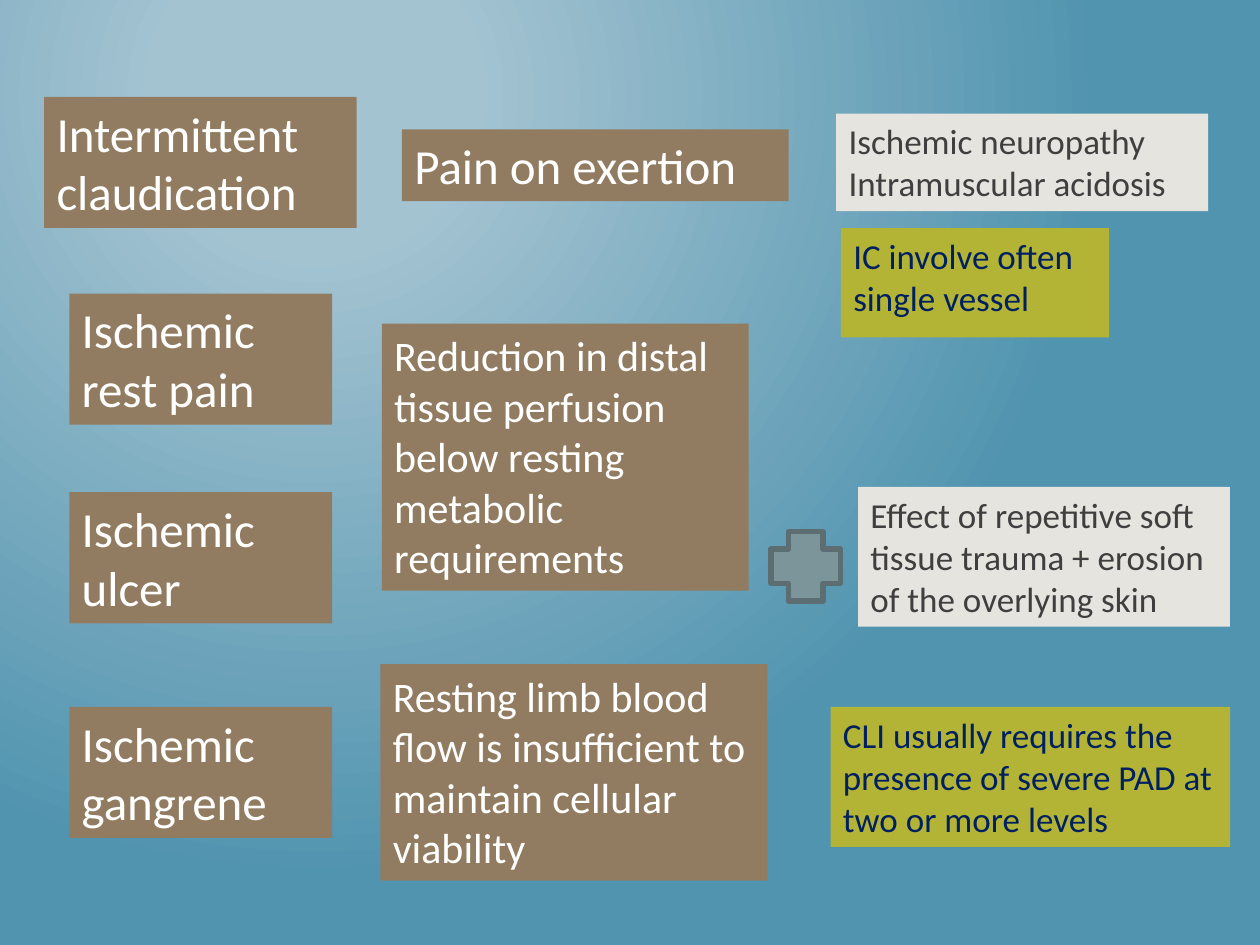
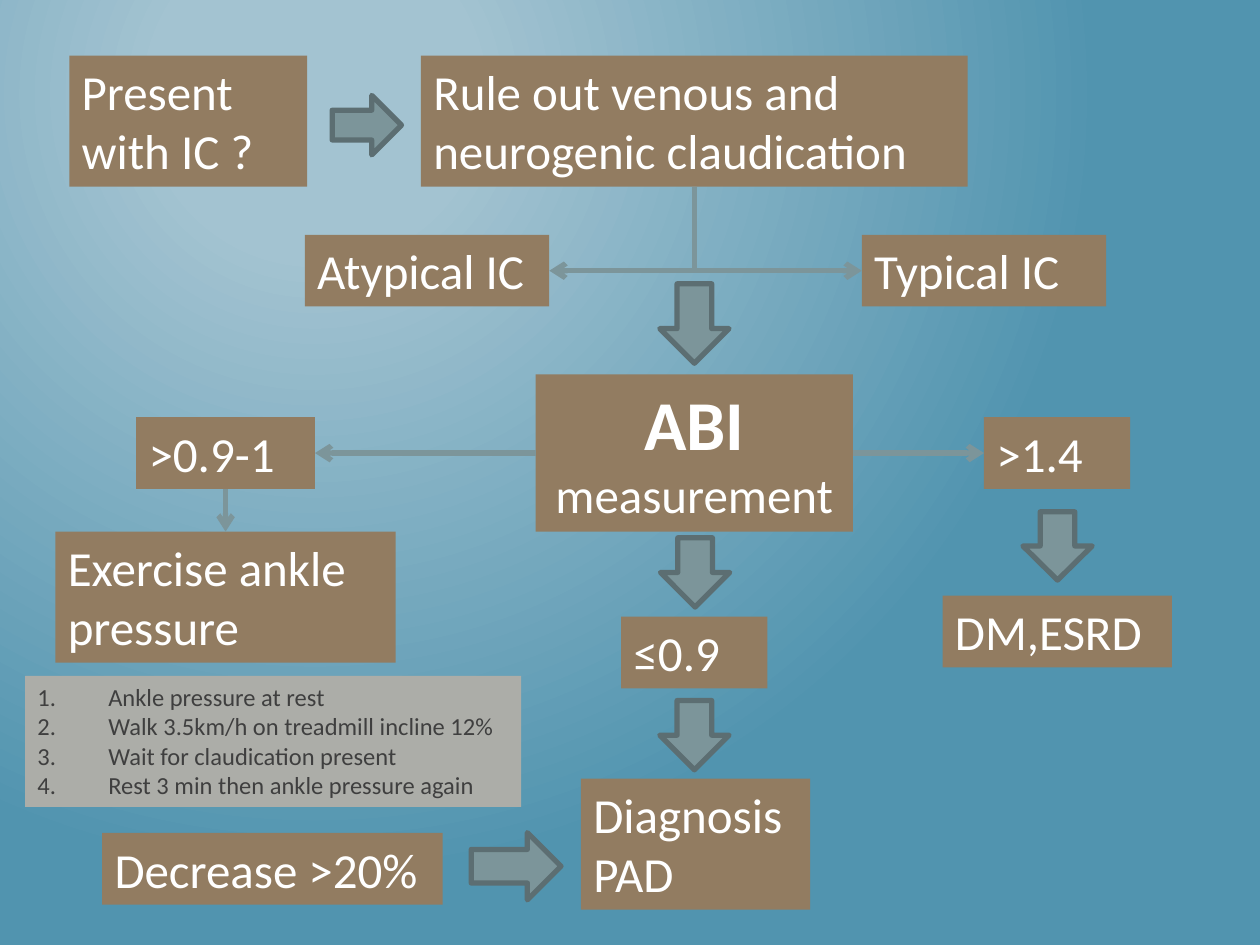
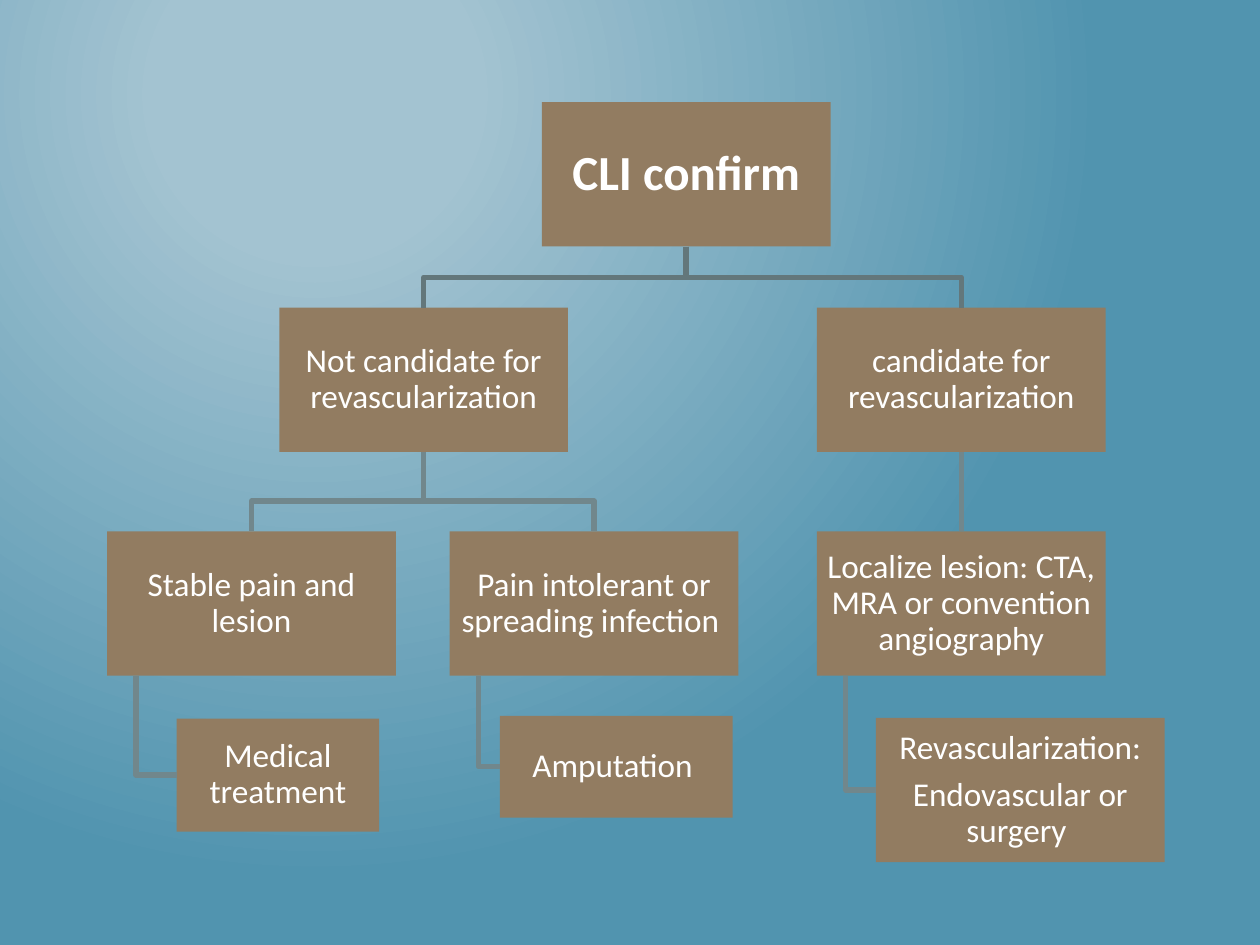
from pptx import Presentation
from pptx.dml.color import RGBColor
from pptx.enum.shapes import MSO_CONNECTOR, MSO_SHAPE
from pptx.enum.text import MSO_ANCHOR, MSO_AUTO_SIZE, PP_ALIGN
from pptx.oxml.ns import qn
from pptx.util import Pt
from lxml.etree import SubElement

FONT = "Calibri"
HEX = {
    "glow": "A3C3D1", "sea": "5194AF", "brown": "927C61", "white": "FFFFFF",
    "pale": "E5E4DF", "gray": "ACADA8", "ink": "3F3F3F", "lime": "B3B435",
    "navy": "002060", "steel": "7C959A", "edge": "5C6E72",
    "trunk": "63777B", "branch": "71878C",
}
ONE, TWO = 41, 74.9         # box heights for one and two lines of 28 pt
WIDE, TALL = 165, 82.5      # size of a tree node


def rgb(name):
    return RGBColor.from_string(HEX[name])


def paint(shape, fill):
    shape.fill.solid()
    shape.fill.fore_color.rgb = rgb(fill)


def style(run, size, color="white", bold=False):
    run.font.name = FONT
    run.font.size = Pt(size)
    run.font.bold = bold
    run.font.color.rgb = rgb(color)


def new_slide(deck):
    """Blank slide with the shared round gradient."""
    slide = deck.slides.add_slide(deck.slide_layouts[6])
    fill = slide.background.fill
    fill.gradient()
    for stop, name, place in zip(fill.gradient_stops, ("glow", "sea"), (0.2, 1)):
        stop.color.rgb = rgb(name)
        stop.position = place
    grad = slide.background._cSld.find(".//" + qn("a:gradFill"))
    grad.remove(grad.find(qn("a:lin")))
    ring = SubElement(grad, qn("a:path"), path="circle")
    SubElement(ring, qn("a:fillToRect"), l="50000", t="20000", r="100000", b="100000")
    return slide


def box(slide, text, left, top, width, height, size=28, fill="brown", color="white"):
    """Filled text box; each line of text is a paragraph."""
    shape = slide.shapes.add_textbox(Pt(left), Pt(top), Pt(width), Pt(height))
    paint(shape, fill)
    frame = shape.text_frame
    frame.word_wrap = True
    frame.auto_size = MSO_AUTO_SIZE.SHAPE_TO_FIT_TEXT
    frame.text = text
    for para in frame.paragraphs:
        style(para.runs[0], size, color)
    return shape


def number(shape, indent):
    """Number the paragraphs of a box."""
    for para in shape.text_frame.paragraphs:
        props = para._p.get_or_add_pPr()
        props.set("marL", str(Pt(indent)))
        props.set("indent", str(-Pt(indent)))
        SubElement(props, qn("a:buAutoNum"), type="arabicPeriod")


def sign(slide, kind, left, top, width=39.6, height=39.6):
    """Outlined plus or block arrow."""
    shape = slide.shapes.add_shape(kind, Pt(left), Pt(top), Pt(width), Pt(height))
    shape.shadow.inherit = False
    paint(shape, "steel")
    shape.line.color.rgb = rgb("edge")
    shape.line.width = Pt(3)


def trim(line, color, head=True):
    """Colour a connector, drop its shadow and give it an arrowhead."""
    line.line.color.rgb = rgb(color)
    line.line.width = Pt(3)
    if head:
        SubElement(line.line._get_or_add_ln(), qn("a:tailEnd"), type="arrow")
    SubElement(line._element.spPr, qn("a:effectLst"))


def link(slide, start, out, end, into, color="steel", head=True):
    """Straight connector between two box sides."""
    line = slide.shapes.add_connector(MSO_CONNECTOR.STRAIGHT, 0, 0, 0, 0)
    line.begin_connect(start, out)
    line.end_connect(end, into)
    trim(line, color, head)


def elbow(slide, start, end):
    """Arrow down from start, then sideways into end."""
    x, y = start.left + start.width // 2, start.top + start.height
    right = end.left > x
    side = end.left if right else end.left + end.width
    drop, reach = end.top + end.height // 2 - y, abs(side - x)
    left = (x + side - drop) // 2
    top = y + (drop - reach) // 2
    line = slide.shapes.add_connector(
        MSO_CONNECTOR.ELBOW, left, top, left + drop, top + reach)
    props = line._element.spPr
    props.find(qn("a:prstGeom")).set("prst", "bentConnector2")
    frame = props.find(qn("a:xfrm"))
    frame.set("rot", str((270 if right else 90) * 60000))
    if right:
        frame.set("flipH", "1")
    trim(line, "steel")


def node(slide, text, left, top, width=WIDE, height=TALL, size=19, bold=False):
    """Tree box with centred text."""
    shape = slide.shapes.add_shape(
        MSO_SHAPE.RECTANGLE, Pt(left), Pt(top), Pt(width), Pt(height))
    shape.shadow.inherit = False
    paint(shape, "brown")
    shape.line.fill.background()
    frame = shape.text_frame
    frame.word_wrap = True
    frame.vertical_anchor = MSO_ANCHOR.MIDDLE
    frame.margin_left = frame.margin_right = Pt(1)
    frame.margin_top = frame.margin_bottom = Pt(1)
    frame.text = text
    for para in frame.paragraphs:
        para.alignment = PP_ALIGN.CENTER
        para.line_spacing = 0.9
        para.space_after = Pt(round(size * 0.35, 1))
        style(para.runs[0], size, bold=bold)
    return shape


def trace(slide, points, color):
    """Open bent line through the points."""
    pen = slide.shapes.build_freeform(*points[0])
    pen.add_line_segments(points[1:], close=False)
    shape = pen.convert_to_shape()
    shape.shadow.inherit = False
    shape.fill.background()
    shape.line.color.rgb = rgb(color)
    shape.line.width = Pt(3)


def fork(slide, top, child, color):
    """Line from the foot of one node to the head of another."""
    x, end = top.left + top.width // 2, child.left + child.width // 2
    bend = child.top - Pt(17.3)
    trace(slide, [(x, top.top + top.height), (x, bend), (end, bend), (end, child.top)], color)


def hang(slide, top, child):
    """Line from near a node's left corner to the side of its leaf."""
    x, y = top.left + top.width // 10, child.top + child.height // 2
    trace(slide, [(x, top.top + top.height), (x, y), (child.left, y)], "branch")


def stages(deck):
    slide = new_slide(deck)
    # Stages of disease
    box(slide, "Intermittent claudication", 25.2, 55.4, 178.6, TWO)
    for text, top in (("Ischemic rest pain", 167.8), ("Ischemic ulcer", 281.3),
                      ("Ischemic gangrene", 404)):
        box(slide, text, 39.6, top, 150.3, TWO)
    # Causes
    box(slide, "Pain on exertion", 229.7, 74, 221, ONE)
    box(slide, "Reduction in distal tissue perfusion below resting metabolic requirements",
        218.2, 185, 209.6, 152.6, 24)
    box(slide, "Resting limb blood flow is insufficient to maintain cellular viability",
        217.4, 379.6, 221, 123.7, 24)
    sign(slide, MSO_SHAPE.CROSS, 440.6, 303.8)
    # Remarks
    for text, left, top in (
            ("Ischemic neuropathy\nIntramuscular acidosis", 477.8, 65),
            ("Effect of repetitive soft tissue trauma + erosion of the overlying skin",
             490.3, 278.2)):
        box(slide, text, left, top, 212.5, 55.7 if "\n" in text else 80, 20, "pale", "ink")
    box(slide, "CLI usually requires the presence of severe PAD at two or more levels",
        474.6, 404, 228.4, 80, 20, "lime", "navy")
    box(slide, "IC involve often\nsingle vessel", 480.5, 130.4, 153.2, 62.4, 20, "lime", "navy")


def workup(deck):
    slide = new_slide(deck)
    # First visit
    box(slide, "Present with IC ?", 39.6, 31.8, 136, TWO)
    rule = box(slide, "Rule out venous and neurogenic claudication", 240.5, 31.8, 312.4, TWO)
    typical = box(slide, "Typical IC", 492.5, 134.2, 139.7, ONE)
    other = box(slide, "Atypical IC", 174.2, 134.2, 139.7, ONE)
    # Index and its results
    index = box(slide, "ABI", 306, 214, 181.4, 89.8)
    para = index.text_frame.paragraphs[0]
    para.alignment = PP_ALIGN.CENTER
    style(para.runs[0], 40, bold=True)
    run = para.add_run()
    run.text = " measurement"
    style(run, 28)
    box(slide, "≤0.9", 355, 352.4, 83.5, ONE)
    box(slide, "Diagnosis PAD", 332, 445, 131, TWO)
    mid = box(slide, ">0.9-1", 77.8, 238.4, 102.2, ONE)
    test = box(slide, "Exercise ankle pressure", 31.7, 303.8, 194.4, TWO)
    high = box(slide, ">1.4", 562.3, 238.4, 83.5, ONE)
    box(slide, "DM,ESRD", 538.6, 340.4, 131, ONE)
    # Exercise test steps
    steps = box(slide, "Ankle pressure at rest\nWalk 3.5km/h on treadmill incline 12%\n"
                "Wait for claudication present\nRest 3 min then ankle pressure again",
                14.3, 386.2, 283.5, 75, 14, "gray", "ink")
    number(steps, 40.5)
    box(slide, "Decrease >20%", 58.4, 476, 194.6, ONE)
    # Block arrows
    sign(slide, MSO_SHAPE.RIGHT_ARROW, 189.8, 54.5, height=34)
    sign(slide, MSO_SHAPE.RIGHT_ARROW, 269.3, 475.8, 51.3, 38.4)
    for left, top, height in ((377, 162.2, 45.4), (377.4, 307.3, 39.6),
                              (377, 400.3, 39.6), (584.5, 292.5, 39)):
        sign(slide, MSO_SHAPE.DOWN_ARROW, left, top, height=height)
    # Thin arrows
    elbow(slide, rule, other)
    elbow(slide, rule, typical)
    link(slide, index, 1, mid, 3)
    link(slide, index, 3, high, 1)
    link(slide, mid, 2, test, 0)


def choices(deck):
    slide = new_slide(deck)
    # Nodes, level by level
    root = node(slide, "CLI confirm", 309.6, 58.4, size=28, bold=True)
    no = node(slide, "Not candidate for revascularization", 159.6, 175.8)
    yes = node(slide, "candidate for revascularization", 466.8, 175.8)
    calm = node(slide, "Stable pain and lesion", 61.2, 303.7)
    worse = node(slide, "Pain intolerant or spreading infection ", 257, 303.7)
    scan = node(slide, "Localize lesion: CTA, MRA or convention angiography", 466.8, 303.7)
    drugs = node(slide, "Medical treatment", 101, 410.6, 115.7, 64.6)
    cut = node(slide, "Amputation ", 285.7, 409, 133, 58.2)
    mend = node(slide, "Revascularization:\nEndovascular or surgery ", 500.5, 410.2)
    # Branches
    for child in (yes, no):
        fork(slide, root, child, "trunk")
    for child in (worse, calm):
        fork(slide, no, child, "branch")
    link(slide, yes, 2, scan, 0, "branch", head=False)
    for top, leaf in ((calm, drugs), (worse, cut), (scan, mend)):
        hang(slide, top, leaf)


def main():
    deck = Presentation()
    deck.slide_width, deck.slide_height = Pt(720), Pt(540)
    stages(deck)
    workup(deck)
    choices(deck)
    deck.save("out.pptx")


if __name__ == "__main__":
    main()
